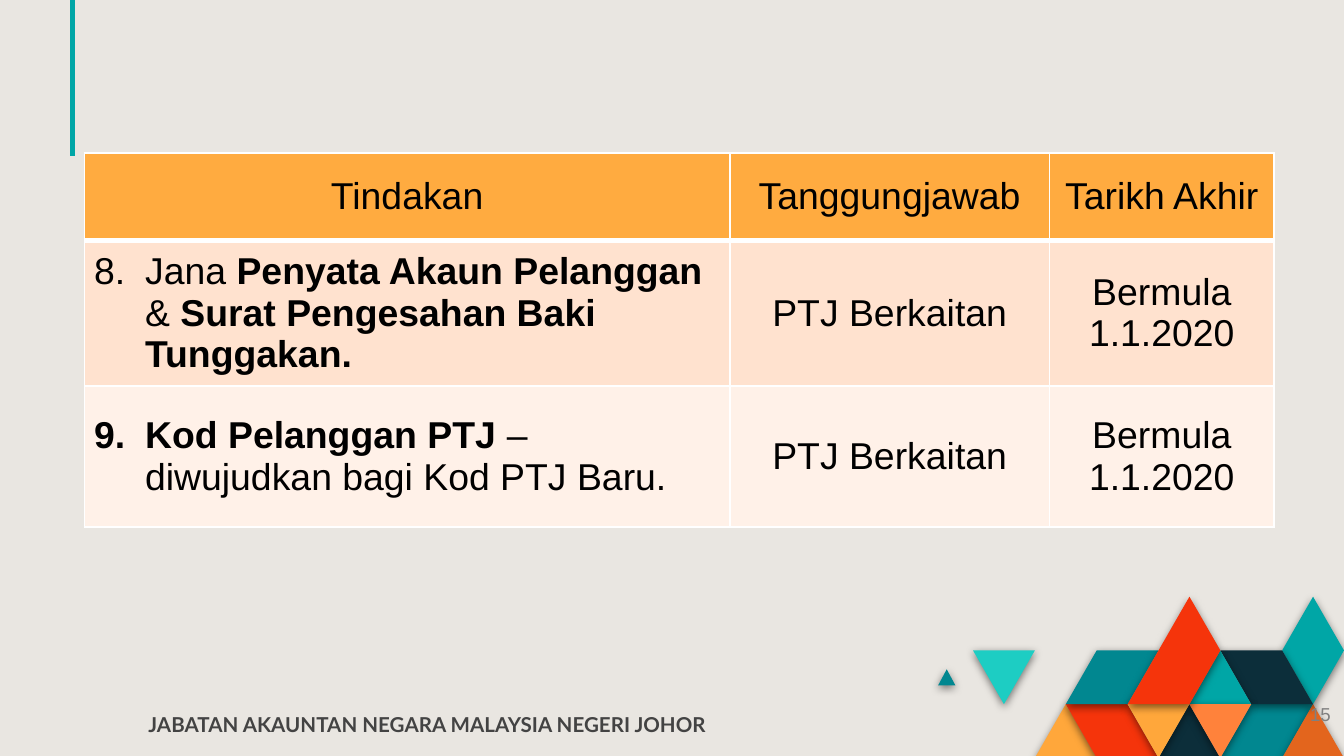
from lxml.etree import SubElement as Sub
from pptx import Presentation
from pptx.dml.color import RGBColor as RGB
from pptx.enum.shapes import MSO_CONNECTOR as Link
from pptx.enum.text import MSO_ANCHOR as Anchor, PP_ALIGN as Align
from pptx.oxml.ns import qn
from pptx.util import Inches, Pt

BACK = RGB(0xE9, 0xE6, 0xE1)
WHITE = RGB(0xFF, 0xFF, 0xFF)
BLACK = RGB(0x00, 0x00, 0x00)
GREY = RGB(0x80, 0x80, 0x80)
DARK = RGB(0x43, 0x43, 0x43)
TEAL = RGB(0x00, 0xA6, 0xA6)
DEEP = RGB(0x01, 0x87, 0x90)
AQUA = RGB(0x1D, 0xCD, 0xC3)
NAVY = RGB(0x0C, 0x2E, 0x3A)
RED = RGB(0xF5, 0x34, 0x0B)
RUST = RGB(0xE3, 0x65, 0x1D)
CORAL = RGB(0xFF, 0x82, 0x3B)
AMBER = RGB(0xFF, 0xA7, 0x3B)
HEAD = RGB(0xFF, 0xAB, 0x40)
PEACH = RGB(0xFF, 0xE2, 0xCF)
CREAM = RGB(0xFF, 0xF1, 0xE8)

TILES = [
    (AMBER, [(0, 3), (1, 2), (2, 3)]),
    (RED, [(1, 2), (3, 2), (4, 3), (2, 3)]),
    (DEEP, [(6, 3), (7, 2), (9, 2), (8, 3)]),
    (RUST, [(8, 3), (9, 2), (10, 3)]),
    (NAVY, [(4, 3), (5, 2), (6, 3)]),
    (DEEP, [(1, 2), (2, 1), (4, 1), (3, 2)]),
    (DEEP, [(-3.13, 1.65), (-2.85, 1.35), (-2.57, 1.65)]),
    (AQUA, [(-2, 1), (0, 1), (-1, 2)]),
    (TEAL, [(8, 1), (9, 0), (10, 1), (9, 2)]),
    (NAVY, [(6, 1), (8, 1), (9, 2), (7, 2)]),
    (TEAL, [(5, 2), (6, 1), (7, 2)]),
    (CORAL, [(5, 2), (7, 2), (6, 3)]),
    (AMBER, [(3, 2), (5, 2), (4, 3)]),
    (RED, [(3, 2), (5, 0), (6, 1), (5, 2)]),
]

ROWS = [
    (HEAD, ["Tindakan", "Tanggungjawab", "Tarikh Akhir"]),
    (PEACH, ["Jana *Penyata Akaun Pelanggan *& *Surat Pengesahan Baki Tunggakan.*",
             "PTJ Berkaitan", "Bermula 1.1.2020"]),
    (CREAM, ["*Kod Pelanggan PTJ *– diwujudkan bagi Kod PTJ Baru.",
             "PTJ Berkaitan", "Bermula 1.1.2020"]),
]


def unit(n):
    return Inches(n / 10)


def write(frame, text, size=20, font="Arial", color=BLACK, align=Align.CENTER, start=None):
    para = frame.paragraphs[0]
    para.alignment = align
    for i, part in enumerate(text.split("*")):
        if part:
            run = para.add_run()
            run.text = part
            run.font.size, run.font.name = Pt(size), font
            run.font.bold = i % 2 == 1
            run.font.color.rgb = color
    if start:
        props = para._p.get_or_add_pPr()
        props.set("marL", str(Inches(0.38)))
        props.set("indent", str(-Inches(0.38)))
        tint = Sub(props, qn("a:buClr"))
        Sub(tint, qn("a:srgbClr"), val=str(color))
        Sub(props, qn("a:buFont"), typeface=font)
        Sub(props, qn("a:buAutoNum"), type="arabicPeriod", startAt=str(start))


class Deck:
    def __init__(self):
        self.file = Presentation()
        self.file.slide_width, self.file.slide_height = Inches(10), Inches(5.625)
        self.slide = self.file.slides.add_slide(self.file.slide_layouts[6])
        self.shapes = self.slide.shapes
        fill = self.slide.background.fill
        fill.solid()
        fill.fore_color.rgb = BACK

    def tile(self, color, points):
        spots = [(unit(77 + 2.3 * col), unit(44.4 + 4 * row)) for col, row in points]
        pen = self.shapes.build_freeform(*spots[0])
        pen.add_line_segments(spots[1:], close=True)
        shape = pen.convert_to_shape()
        shape.fill.solid()
        shape.fill.fore_color.rgb = color
        shape.line.fill.background()
        shape.shadow.inherit = False
        effect = shape._element.spPr.find(qn("a:effectLst"))
        shade = Sub(effect, qn("a:outerShdw"), blurRad=str(Pt(4.5)), dist=str(Pt(1.5)),
                    dir="5400000", algn="bl", rotWithShape="0")
        tint = Sub(shade, qn("a:srgbClr"), val=str(BLACK))
        Sub(tint, qn("a:alpha"), val="50000")

    def line(self, x, top, end, color, width):
        line = self.shapes.add_connector(Link.STRAIGHT, unit(x), unit(top), unit(x), unit(end))
        line.line.color.rgb = color
        line.line.width = Pt(width)
        Sub(line._element.spPr, qn("a:effectLst"))

    def text(self, box, text, **style):
        frame = self.shapes.add_textbox(*map(unit, box)).text_frame
        frame.word_wrap = True
        frame.vertical_anchor = Anchor.MIDDLE
        frame.margin_left = frame.margin_right = unit(1)
        frame.margin_top = frame.margin_bottom = unit(1)
        write(frame, text, **style)

    def cell(self, cell, color, base):
        cell.vertical_anchor = Anchor.MIDDLE
        cell.margin_left = cell.margin_right = unit(0.7)
        cell.margin_top = cell.margin_bottom = unit(0.4)
        props = cell._tc.get_or_add_tcPr()
        for side, width in zip("LRTB", (1, 1, 1, base)):
            edge = Sub(props, qn("a:ln" + side), w=str(Pt(width)))
            Sub(Sub(edge, qn("a:solidFill")), qn("a:srgbClr"), val=str(WHITE))
        cell.fill.solid()
        cell.fill.fore_color.rgb = color

    def table(self, left, top, cols, highs, rows, first):
        table = self.shapes.add_table(len(rows), len(cols), unit(left), unit(top),
                                      unit(sum(cols)), unit(sum(highs))).table
        table.first_row = table.horz_banding = False
        for col, wide in zip(table.columns, cols):
            col.width = unit(wide)
        for r, (color, texts) in enumerate(rows):
            table.rows[r].height = unit(highs[r])
            for c, text in enumerate(texts):
                cell = table.cell(r, c)
                self.cell(cell, color, 1 if r else 3)
                item = r > 0 and c == 0
                write(cell.text_frame, text, align=Align.LEFT if item else Align.CENTER,
                      start=first + r - 1 if item else None)


def main():
    deck = Deck()
    for color, points in TILES:
        deck.tile(color, points)
    deck.line(5.4, 0, 11.6, TEAL, 2.25)
    deck.text((94, 51, 6, 4.3), "15", size=10, color=GREY, align=Align.RIGHT)
    deck.table(6.3, 11.4, (48, 23.8, 16.7), (6.5, 10.7, 10.5), ROWS, 8)
    deck.text((6.4, 51.2, 50.8, 5.4), "*JABATAN AKAUNTAN NEGARA MALAYSIA NEGERI JOHOR*",
              size=11, font="Lato", color=DARK)
    deck.file.save("out.pptx")


if __name__ == "__main__":
    main()
